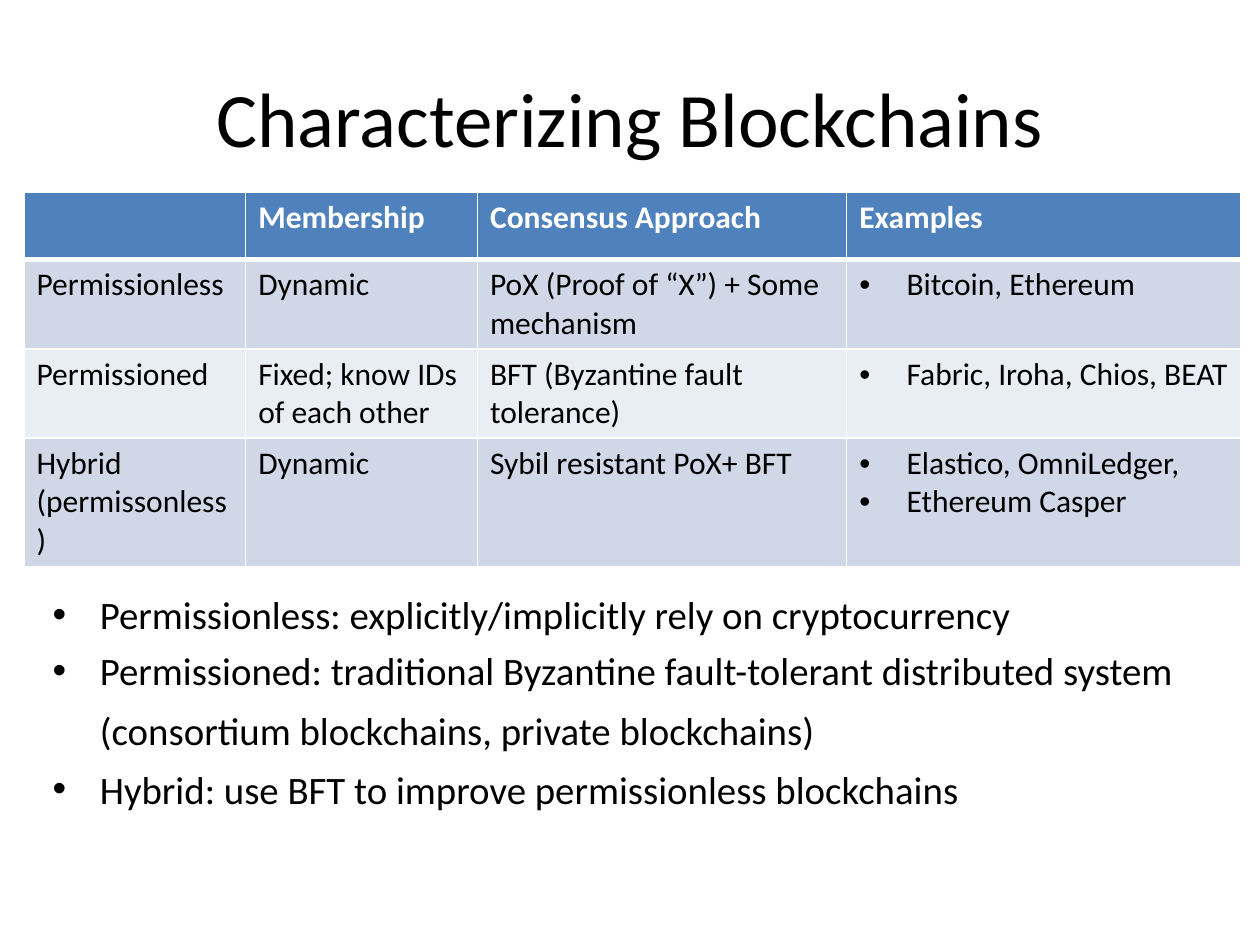
from lxml.etree import SubElement
from pptx import Presentation
from pptx.dml.color import RGBColor
from pptx.enum.text import MSO_ANCHOR, PP_ALIGN
from pptx.oxml.ns import qn
from pptx.util import Pt

FONT = "Calibri"
BLACK = RGBColor(0x00, 0x00, 0x00)
WHITE = RGBColor(0xFF, 0xFF, 0xFF)
HEADER_BLUE = RGBColor(0x4F, 0x81, 0xBD)
BAND_DARK = RGBColor(0xD0, 0xD8, 0xE8)
BAND_LIGHT = RGBColor(0xE9, 0xED, 0xF4)

COLUMN_WIDTHS = [126.7, 132.5, 211, 225.4]
ROW_HEIGHTS = [38.5, 51, 51, 73.5]
EXAMPLES_COLUMN = 3
BLOCKCHAIN_TYPES = [
    ["", "Membership", "Consensus Approach", "Examples"],
    ["Permissionless", "Dynamic", "PoX (Proof of “X”) + Some mechanism",
     "Bitcoin, Ethereum"],
    ["Permissioned", "Fixed; know IDs of each other",
     "BFT (Byzantine fault tolerance)", "Fabric, Iroha, Chios, BEAT"],
    ["Hybrid (permissonless)", "Dynamic", "Sybil resistant PoX+ BFT",
     "Elastico, OmniLedger,\nEthereum Casper"],
]
REMARKS = [
    "Permissionless: explicitly/implicitly rely on cryptocurrency",
    "Permissioned: traditional Byzantine fault-tolerant distributed system "
    "(consortium blockchains, private blockchains)",
    "Hybrid: use BFT to improve permissionless blockchains",
]


def style_paragraph(paragraph, size, color=BLACK, bold=False):
    font = paragraph.font
    font.name, font.size, font.bold = FONT, Pt(size), bold
    font.color.rgb = color


def add_bullet(paragraph, indent=27):
    properties = paragraph._p.get_or_add_pPr()
    properties.set("marL", str(Pt(indent)))
    properties.set("indent", str(-Pt(indent)))
    SubElement(properties, qn("a:buFont"), typeface="Arial")
    SubElement(properties, qn("a:buChar"), char="•")


def add_text_frame(slide, left, top, width, height):
    frame = slide.shapes.add_textbox(
        Pt(left), Pt(top), Pt(width), Pt(height)).text_frame
    frame.word_wrap = True
    return frame


def set_borders(cell, top, bottom):
    properties = cell._tc.get_or_add_tcPr()
    for side, width in (("L", 1), ("R", 1), ("T", top), ("B", bottom)):
        line = SubElement(properties, qn(f"a:ln{side}"), w=str(Pt(width)))
        fill = SubElement(line, qn("a:solidFill"))
        SubElement(fill, qn("a:srgbClr"), val=str(WHITE))


def add_title(slide):
    frame = add_text_frame(slide, 36, 21.6, 648, 90)
    frame.vertical_anchor = MSO_ANCHOR.MIDDLE
    frame.text = "Characterizing Blockchains"
    title = frame.paragraphs[0]
    title.alignment = PP_ALIGN.CENTER
    style_paragraph(title, 44)


def add_comparison_table(slide):
    table = slide.shapes.add_table(
        len(ROW_HEIGHTS), len(COLUMN_WIDTHS), Pt(13.7), Pt(109.8),
        Pt(sum(COLUMN_WIDTHS)), Pt(sum(ROW_HEIGHTS))).table
    for column, width in zip(table.columns, COLUMN_WIDTHS):
        column.width = Pt(width)
    for row, height in zip(table.rows, ROW_HEIGHTS):
        row.height = Pt(height)

    for r, texts in enumerate(BLOCKCHAIN_TYPES):
        is_header = r == 0
        band = HEADER_BLUE if is_header else BAND_DARK if r % 2 else BAND_LIGHT
        for c, text in enumerate(texts):
            cell = table.cell(r, c)
            # The header is set off by a thicker rule
            set_borders(cell, top=3 if r == 1 else 1, bottom=3 if is_header else 1)
            cell.fill.solid()
            cell.fill.fore_color.rgb = band
            cell.text = text
            for paragraph in cell.text_frame.paragraphs:
                if c == EXAMPLES_COLUMN and not is_header:
                    add_bullet(paragraph)
                style_paragraph(paragraph, 18, WHITE if is_header else BLACK,
                                bold=is_header)


def add_remarks(slide):
    frame = add_text_frame(slide, 23, 334, 662, 138)
    frame.text = "\n".join(REMARKS)
    for i, paragraph in enumerate(frame.paragraphs):
        if i:
            paragraph.space_before = Pt(5.5)
        paragraph.line_spacing = 1.0
        add_bullet_after_spacing(paragraph)
        style_paragraph(paragraph, 22.2)
    # A larger closing space opens up the wrapped line
    closing_space = frame.paragraphs[1].add_run()
    closing_space.text = " "
    closing_space.font.size = Pt(29.6)


def add_bullet_after_spacing(paragraph):
    add_bullet(paragraph, indent=27)


def main():
    presentation = Presentation()
    presentation.slide_width, presentation.slide_height = Pt(720), Pt(540)
    slide = presentation.slides.add_slide(presentation.slide_layouts[6])
    add_title(slide)
    add_comparison_table(slide)
    add_remarks(slide)
    presentation.save("out.pptx")


if __name__ == "__main__":
    main()
